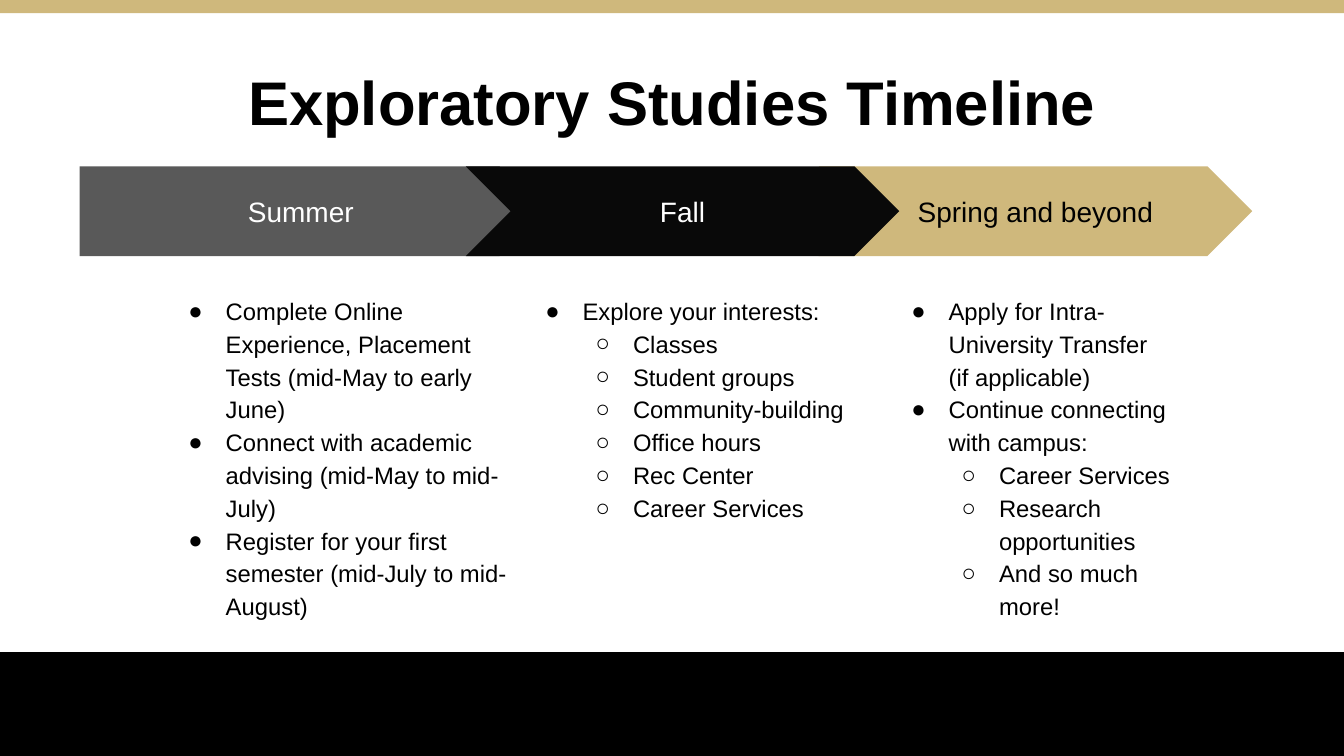
import dataclasses
import typing

import lxml.etree
import pptx
import pptx.dml.color
import pptx.enum.shapes
import pptx.enum.text
import pptx.oxml.ns
import pptx.util

Inches = pptx.util.Inches
SHAPES = pptx.enum.shapes.MSO_SHAPE
ALIGN = pptx.enum.text.PP_ALIGN
ANCHOR = pptx.enum.text.MSO_ANCHOR

COLORS = {
    "gold": "CFB87C",
    "gray": "595959",
    "charcoal": "090909",
    "black": "000000",
    "white": "FFFFFF",
}
BULLETS = "●○"
ARROW_TOP, ARROW_HEIGHT = 1.65, 0.89
LIST_TOP, LIST_HEIGHT = 2.8, 3.48
MARGINS = ("margin_left", "margin_top", "margin_right", "margin_bottom")


@dataclasses.dataclass
class Band:
    top: float
    height: float
    color: str


@dataclasses.dataclass
class Item:
    text: str
    level: int = 0


@dataclasses.dataclass
class Stage:
    label: str
    outline: SHAPES
    arrow_left: float
    arrow_width: float
    fill: str
    label_color: str
    list_left: float
    list_width: float
    items: list[Item]


BANDS = [Band(6.47, 1.03, "black"), Band(0, 0.13, "gold")]

STAGES = [
    Stage("Spring and beyond", SHAPES.CHEVRON, 8.12, 4.3, "gold", "black", 8.81, 2.91, [
        Item("Apply for Intra-University Transfer (if applicable)"),
        Item("Continue connecting with campus:"),
        Item("Career Services", 1),
        Item("Research opportunities", 1),
        Item("And so much more!", 1),
    ]),
    Stage("Summer", SHAPES.PENTAGON, 0.79, 4.61, "gray", "white", 1.64, 3.59, [
        Item("Complete Online Experience, Placement Tests (mid-May to early June)"),
        Item("Connect with academic advising (mid-May to mid-July)"),
        Item("Register for your first semester (mid-July to mid-August)"),
    ]),
    Stage("Fall", SHAPES.CHEVRON, 4.62, 4.3, "charcoal", "white", 5.18, 3.41, [
        Item("Explore your interests:"),
        Item("Classes", 1),
        Item("Student groups", 1),
        Item("Community-building", 1),
        Item("Office hours", 1),
        Item("Rec Center", 1),
        Item("Career Services", 1),
    ]),
]


def apply_format(target: typing.Any, values: dict[str, typing.Any]) -> None:
    for name, value in values.items():
        setattr(target, name, value)


def rgb(color: str) -> pptx.dml.color.RGBColor:
    return pptx.dml.color.RGBColor.from_string(COLORS[color])


def write_text(paragraph: typing.Any, text: str, size: float, color: str, bold: bool = False) -> None:
    run = paragraph.add_run()
    run.text = text
    apply_format(run.font, {"name": "Arial", "size": pptx.util.Pt(size), "bold": bold})
    run.font.color.rgb = rgb(color)


def add_filled_shape(shapes: typing.Any, outline: SHAPES, left: float, top: float,
                     width: float, height: float, color: str) -> typing.Any:
    shape = shapes.add_shape(outline, Inches(left), Inches(top), Inches(width), Inches(height))
    shape.shadow.inherit = False
    shape.fill.solid()
    shape.fill.fore_color.rgb = rgb(color)
    shape.line.fill.background()
    return shape


def set_frame(frame: typing.Any, anchor: ANCHOR) -> None:
    apply_format(frame, {"word_wrap": True, "vertical_anchor": anchor})
    apply_format(frame, dict.fromkeys(MARGINS, Inches(0.1)))


def add_bullet(paragraph: typing.Any, level: int) -> None:
    qualify = pptx.oxml.ns.qn
    properties = paragraph._p.get_or_add_pPr()
    properties.set("marL", str(Inches(0.5 * (level + 1))))
    properties.set("indent", str(Inches(-0.37)))
    bullet_color = lxml.etree.SubElement(properties, qualify("a:buClr"))
    lxml.etree.SubElement(bullet_color, qualify("a:srgbClr"), val=COLORS["black"])
    lxml.etree.SubElement(properties, qualify("a:buFont"), typeface="Arial")
    lxml.etree.SubElement(properties, qualify("a:buChar"), char=BULLETS[level])


def add_title(slide: typing.Any, text: str) -> None:
    title = slide.shapes.title
    apply_format(title, {"left": Inches(0.92), "top": Inches(0.32),
                         "width": Inches(11.5), "height": Inches(1.45)})
    title.text_frame.vertical_anchor = ANCHOR.MIDDLE
    paragraph = title.text_frame.paragraphs[0]
    apply_format(paragraph, {"alignment": ALIGN.CENTER, "line_spacing": 0.9})
    write_text(paragraph, text, 44, "black", True)


def add_stage(slide: typing.Any, stage: Stage) -> None:
    shapes = slide.shapes.add_group_shape().shapes
    arrow = add_filled_shape(shapes, stage.outline, stage.arrow_left, ARROW_TOP,
                             stage.arrow_width, ARROW_HEIGHT, stage.fill)
    arrow.adjustments[0] = 0.5
    set_frame(arrow.text_frame, ANCHOR.MIDDLE)
    label = arrow.text_frame.paragraphs[0]
    label.alignment = ALIGN.CENTER
    write_text(label, stage.label, 20, stage.label_color)

    box = shapes.add_textbox(Inches(stage.list_left), Inches(LIST_TOP),
                             Inches(stage.list_width), Inches(LIST_HEIGHT))
    frame = box.text_frame
    set_frame(frame, ANCHOR.TOP)
    for index, item in enumerate(stage.items):
        paragraph = frame.add_paragraph() if index else frame.paragraphs[0]
        add_bullet(paragraph, item.level)
        apply_format(paragraph, {"level": item.level, "line_spacing": 1.15,
                                 "alignment": ALIGN.LEFT})
        write_text(paragraph, item.text, 17, "black")


def main() -> None:
    presentation = pptx.Presentation()
    apply_format(presentation, {"slide_width": Inches(13.33), "slide_height": Inches(7.5)})
    slide = presentation.slides.add_slide(presentation.slide_layouts.get_by_name("Title Only"))
    for band in BANDS:
        add_filled_shape(slide.shapes, SHAPES.RECTANGLE, 0, band.top, 13.33, band.height, band.color)
    add_title(slide, "Exploratory Studies Timeline")
    for stage in STAGES:
        add_stage(slide, stage)
    presentation.save("out.pptx")


if __name__ == "__main__":
    main()
